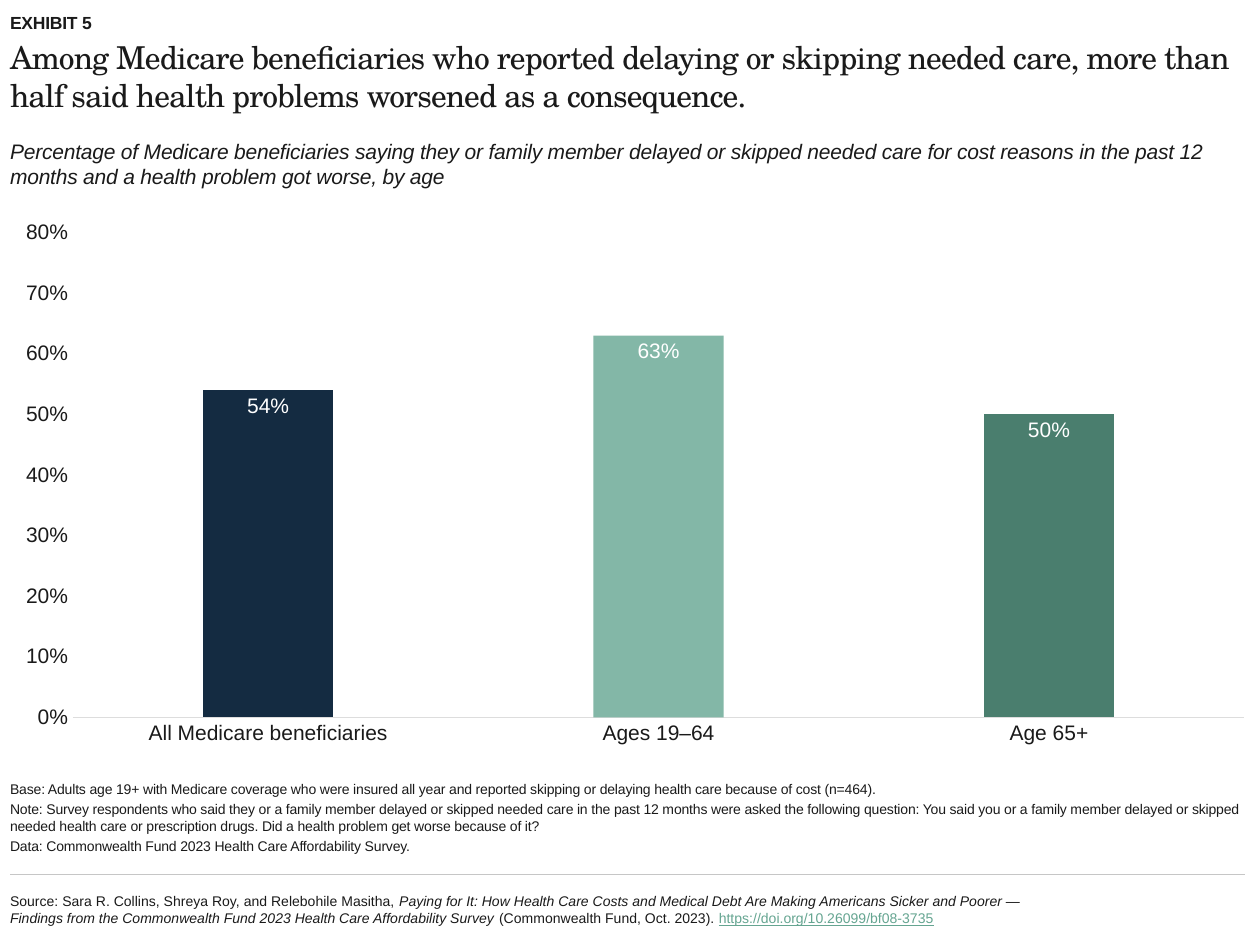
from lxml import etree
from pptx import Presentation
from pptx.chart.data import CategoryChartData
from pptx.dml.color import RGBColor
from pptx.enum import chart as ch, shapes, text as tx
from pptx.oxml import parse_xml
from pptx.oxml.ns import nsdecls, qn
from pptx.util import Inches, Pt

INK = RGBColor(0x1A, 0x1A, 0x1A)
WHITE = RGBColor(0xFF, 0xFF, 0xFF)
RULE = RGBColor(0xC6, 0xC6, 0xC6)
AXIS = RGBColor(0xDD, 0xDD, 0xDD)
NAVY = RGBColor(0x14, 0x2B, 0x41)
MINT = RGBColor(0x65, 0xA5, 0x91)
GREEN = RGBColor(0x4A, 0x7E, 0x6E)

SANS = "Arial"
SERIF = "TeX Gyre Schola"
LEFT, WIDTH = 0.08, 9.8

TITLE = ("Among Medicare beneficiaries who reported delaying or skipping needed care, "
         "more than half said health problems worsened as a consequence.")
LEAD = ("Percentage of Medicare beneficiaries saying they or family member delayed or "
        "skipped needed care for cost reasons in the past 12 months and a health problem "
        "got worse, by age")
NOTES = [
    "Base: Adults age 19+ with Medicare coverage who were insured all year and reported "
    "skipping or delaying health care because of cost (n=464).",
    "Note: Survey respondents who said they or a family member delayed or skipped needed "
    "care in the past 12 months were asked the following question: You said you or a family "
    "member delayed or skipped needed health care or prescription drugs. Did a health "
    "problem get worse because of it?",
    "Data: Commonwealth Fund 2023 Health Care Affordability Survey.",
]
SOURCE = [
    ("Source: Sara R. Collins, Shreya Roy, and Relebohile Masitha, ", {}),
    ("Paying for It: How Health Care Costs and Medical Debt Are Making Americans Sicker "
     "and Poorer — Findings from the Commonwealth Fund 2023 Health Care Affordability "
     "Survey", {"italic": True}),
    (" (Commonwealth Fund, Oct. 2023). ", {}),
    ("https://doi.org/10.26099/bf08-3735", {"color": MINT, "under": True}),
]
BARS = [("All Medicare beneficiaries", 0.54, NAVY, None),
        ("Ages 19–64", 0.63, MINT, 80),
        ("Age 65+", 0.5, GREEN, None)]


def style(font, size, color=INK, face=SANS, bold=False, italic=False, under=False):
    font.size, font.name = Pt(size), face
    font.bold, font.italic = bold, italic
    if under:
        font.underline = True
    font.color.rgb = color


def write(para, words, space=0, **form):
    """Add a run; space is the letter spacing in points."""
    run = para.add_run()
    run.text = words
    style(run.font, **form)
    if space:
        run.font._element.set("spc", str(round(space * 100)))


class Page:
    def __init__(self, slide, face=SANS):
        self.slide = slide
        self.face = face

    def text(self, top, height, paras, width=WIDTH, anchor=tx.MSO_ANCHOR.TOP,
             after=0, **form):
        """Each paragraph is a string or a list of (words, format) runs."""
        box = self.slide.shapes.add_textbox(
            Inches(LEFT), Inches(top), Inches(width), Inches(height))
        frame = box.text_frame
        frame.word_wrap = True
        frame.vertical_anchor = anchor
        frame.margin_left = frame.margin_right = 0
        frame.margin_top = frame.margin_bottom = 0
        form = {"face": self.face, **form}
        for i, runs in enumerate(paras):
            para = frame.add_paragraph() if i else frame.paragraphs[0]
            para.space_after = Pt(after)
            for words, extra in [(runs, {})] if isinstance(runs, str) else runs:
                write(para, words, **{**form, **extra})

    def rule(self, top):
        line = self.slide.shapes.add_connector(
            shapes.MSO_CONNECTOR.STRAIGHT, Inches(LEFT), Inches(top),
            Inches(LEFT + WIDTH), Inches(top))
        line.line.color.rgb = RULE
        line.line.width = Pt(0.75)
        etree.SubElement(line._element.spPr, qn("a:effectLst"))

    def chart(self, top, height, bars):
        data = CategoryChartData(number_format="0%")
        data.categories = [bar[0] for bar in bars]
        data.add_series("Series 1", [bar[1] for bar in bars])
        chart = self.slide.shapes.add_chart(
            ch.XL_CHART_TYPE.COLUMN_STACKED, Inches(LEFT), Inches(top),
            Inches(WIDTH), Inches(height), data).chart
        chart.has_legend = chart.has_title = False
        style(chart.font, 10, face=self.face)

        for axis in (chart.category_axis, chart.value_axis):
            axis.major_tick_mark = axis.minor_tick_mark = ch.XL_TICK_MARK.NONE
            axis.has_major_gridlines = False
            style(axis.tick_labels.font, 12, face=self.face)
        base = chart.category_axis.format.line
        base.color.rgb, base.width = AXIS, Pt(0.75)
        scale = chart.value_axis
        scale.format.line.fill.background()
        scale.minimum_scale, scale.maximum_scale, scale.major_unit = 0, 0.8, 0.1
        scale.tick_labels.number_format = "0%"
        scale.tick_labels.number_format_is_linked = False

        plot = chart.plots[0]
        plot.gap_width, plot.overlap, plot.vary_by_categories = 200, 100, False
        series = plot.series[0]
        series.format.fill.solid()
        series.format.fill.fore_color.rgb = MINT
        for i, (_, _, color, alpha) in enumerate(bars):
            form = series.points[i].format
            form.fill.solid()
            form.fill.fore_color.rgb = color
            form.line.fill.background()
            if alpha:
                tint = form._element.find(".//" + qn("a:srgbClr"))
                etree.SubElement(tint, qn("a:alpha"), val=str(alpha * 1000))

        labels = series.data_labels
        labels.show_value = True
        labels.position = ch.XL_LABEL_POSITION.INSIDE_END
        labels.number_format, labels.number_format_is_linked = "0%", False
        style(labels.font, 12, WHITE, self.face)
        self.inset(chart, x=0.051, y=0.034, w=0.949, h=0.895)

    def inset(self, chart, **place):
        """Fix the inner plot area as fractions of the chart."""
        area = chart._chartSpace.chart.plotArea
        for old in area.findall(qn("c:layout")):
            area.remove(old)
        parts = "".join(f'<c:{key}Mode val="edge"/>' for key in "xy")
        parts += "".join(f'<c:{key} val="{val}"/>' for key, val in place.items())
        area.insert(0, parse_xml(
            f'<c:layout {nsdecls("c")}><c:manualLayout><c:layoutTarget val="inner"/>'
            f'{parts}</c:manualLayout></c:layout>'))


def main():
    deck = Presentation()
    deck.slide_width, deck.slide_height = Inches(10), Inches(7.5)
    page = Page(deck.slides.add_slide(deck.slide_layouts[6]))
    low = tx.MSO_ANCHOR.BOTTOM

    page.text(6.99, 0.46, [SOURCE], width=8.14, anchor=tx.MSO_ANCHOR.MIDDLE, size=8)
    page.rule(6.94)
    page.text(0.3, 0.83, [TITLE], size=18, face=SERIF, space=-0.5)
    page.chart(1.7, 4.3, BARS)
    page.text(0.05, 0.21, ["EXHIBIT 5"], anchor=low, size=10, bold=True, space=-0.1)
    page.text(1.1, 0.44, [LEAD], size=12, italic=True, space=-0.1)
    page.text(6.28, 0.5, NOTES, anchor=low, after=2, size=8, space=-0.1)
    deck.save("out.pptx")


if __name__ == "__main__":
    main()
